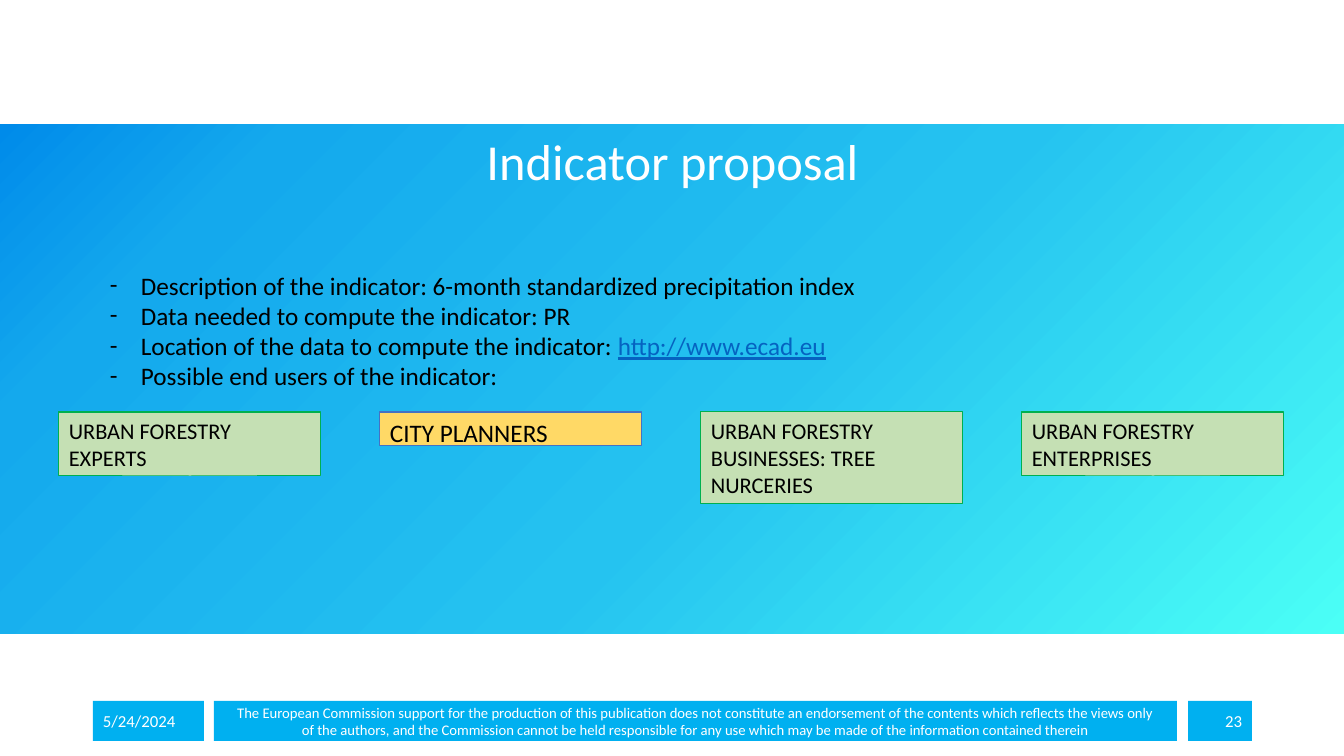
from copy import deepcopy

from lxml.etree import SubElement
from pptx import Presentation
from pptx.dml.color import RGBColor
from pptx.enum.shapes import MSO_SHAPE
from pptx.enum.text import MSO_ANCHOR, PP_ALIGN
from pptx.oxml.ns import qn
from pptx.util import Pt

SLIDE_WIDTH, SLIDE_HEIGHT = 1344, 756
EMU_PER_PX = 12192000 / SLIDE_WIDTH
FONT = "Calibri"
COLORS = {
    "white": "FFFFFF",
    "black": "000000",
    "footer": "00B0F0",
    "link": "0563C1",
    "green": "C5E0B4",
    "green_line": "00B050",
    "yellow": "FFD966",
    "blue_line": "4472C4",
    "aqua": "4BFFF6",
    "sky": "25C3F0",
    "azure": "14A9ED",
    "blue": "008BEA",
}
BAND_STOPS = [(0, "aqua"), (0.44, "sky"), (0.84, "azure"), (1, "blue")]
DISCLAIMER = [
    "The European Commission support for the production of this publication does not "
    "constitute an endorsement of the contents which reflects the views only",
    "of the authors, and the Commission cannot be held responsible for any use which "
    "may be made of the information contained therein",
]
INDICATOR_FACTS = [
    ("Description of the indicator: 6-month standardized precipitation index", ""),
    ("Data needed to compute the indicator: PR", ""),
    ("Location of the data to compute the indicator: ", "http://www.ecad.eu"),
    ("Possible end users of the indicator:", ""),
]
CARD_LEFT, CARD_STEP, CARD_TOP, CARD_WIDTH = 59, 321, 412, 262
END_USERS = [
    ("URBAN FORESTRY EXPERTS", 64, "green", "green_line", 16),
    ("CITY PLANNERS", 34, "yellow", "blue_line", 18),
    ("URBAN FORESTRY BUSINESSES: TREE NURCERIES", 92, "green", "green_line", 16),
    ("URBAN FORESTRY ENTERPRISES", 64, "green", "green_line", 16),
]


def px(length):
    return round(length * EMU_PER_PX)


def rgb(name):
    return RGBColor.from_string(COLORS[name])


def add_span(para, text, size, color="black", underline=None):
    span = para.add_run()
    span.text = text
    span.font.name = FONT
    span.font.size = Pt(size)
    span.font.color.rgb = rgb(color)
    span.font.underline = underline


def write_text(box, lines, size, color="black", align=PP_ALIGN.LEFT,
               anchor=MSO_ANCHOR.TOP, line_spacing=None):
    """Fill an empty box with one paragraph per line and return the paragraphs."""
    frame = box.text_frame
    frame.word_wrap = True
    frame.vertical_anchor = anchor
    paragraphs = []
    for line in lines:
        para = frame.add_paragraph() if paragraphs else frame.paragraphs[0]
        para.alignment = align
        para.line_spacing = line_spacing
        add_span(para, line, size, color)
        paragraphs.append(para)
    return paragraphs


def add_text_box(page, left, top, width, height):
    return page.shapes.add_textbox(px(left), px(top), px(width), px(height))


def add_rectangle(page, left, top, width, height, fill=None, line=None):
    box = page.shapes.add_shape(
        MSO_SHAPE.RECTANGLE, px(left), px(top), px(width), px(height))
    box.shadow.inherit = False
    if fill:
        box.fill.solid()
        box.fill.fore_color.rgb = rgb(fill)
    if line:
        box.line.color.rgb = rgb(line)
        box.line.width = Pt(0.75)
    else:
        box.line.fill.background()
    return box


def add_gradient_band(page):
    band = add_rectangle(page, 0, 124, SLIDE_WIDTH, 510)
    band.fill.gradient()
    band.fill.gradient_angle = 135
    stop_list = band.fill._xPr.find(".//" + qn("a:gsLst"))
    while len(stop_list) < len(BAND_STOPS):
        stop_list.append(deepcopy(stop_list[0]))
    for stop, (position, color) in zip(band.fill.gradient_stops, BAND_STOPS):
        stop.position = position
        stop.color.rgb = rgb(color)


def add_dash(para):
    properties = para._p.get_or_add_pPr()
    properties.set("marL", str(px(31)))
    properties.set("indent", str(-px(31)))
    SubElement(properties, qn("a:buFont"), typeface=FONT)
    SubElement(properties, qn("a:buChar"), char="-")


def add_facts(page):
    box = add_text_box(page, 100, 265, 1009, 194)
    paragraphs = write_text(box, [text for text, _ in INDICATOR_FACTS], 18)
    for para, (_, address) in zip(paragraphs, INDICATOR_FACTS):
        add_dash(para)
        if address:
            add_span(para, address, 18, "link", underline=True)


def add_end_users(page):
    for column, (name, height, fill, line, size) in enumerate(END_USERS):
        card = add_rectangle(page, CARD_LEFT + column * CARD_STEP, CARD_TOP,
                             CARD_WIDTH, height, fill, line)
        write_text(card, [name], size)


def add_footer(page):
    for left, width, lines, size, align in [
        (93, 111, ["5/24/2024"], 12, PP_ALIGN.LEFT),
        (214, 963, DISCLAIMER, 10.5, PP_ALIGN.CENTER),
        (1188, 64, ["23"], 12, PP_ALIGN.RIGHT),
    ]:
        box = add_rectangle(page, left, 701, width, 40, "footer")
        write_text(box, lines, size, "white", align, MSO_ANCHOR.MIDDLE)


def main():
    deck = Presentation()
    deck.slide_width, deck.slide_height = px(SLIDE_WIDTH), px(SLIDE_HEIGHT)
    page = deck.slides.add_slide(deck.slide_layouts[6])
    add_gradient_band(page)
    title = add_text_box(page, 93, 124, 1159, 72)
    write_text(title, ["Indicator proposal"], 36, "white", PP_ALIGN.CENTER,
               MSO_ANCHOR.BOTTOM, line_spacing=0.9)
    add_footer(page)
    add_facts(page)
    add_end_users(page)
    deck.save("out.pptx")


if __name__ == "__main__":
    main()
